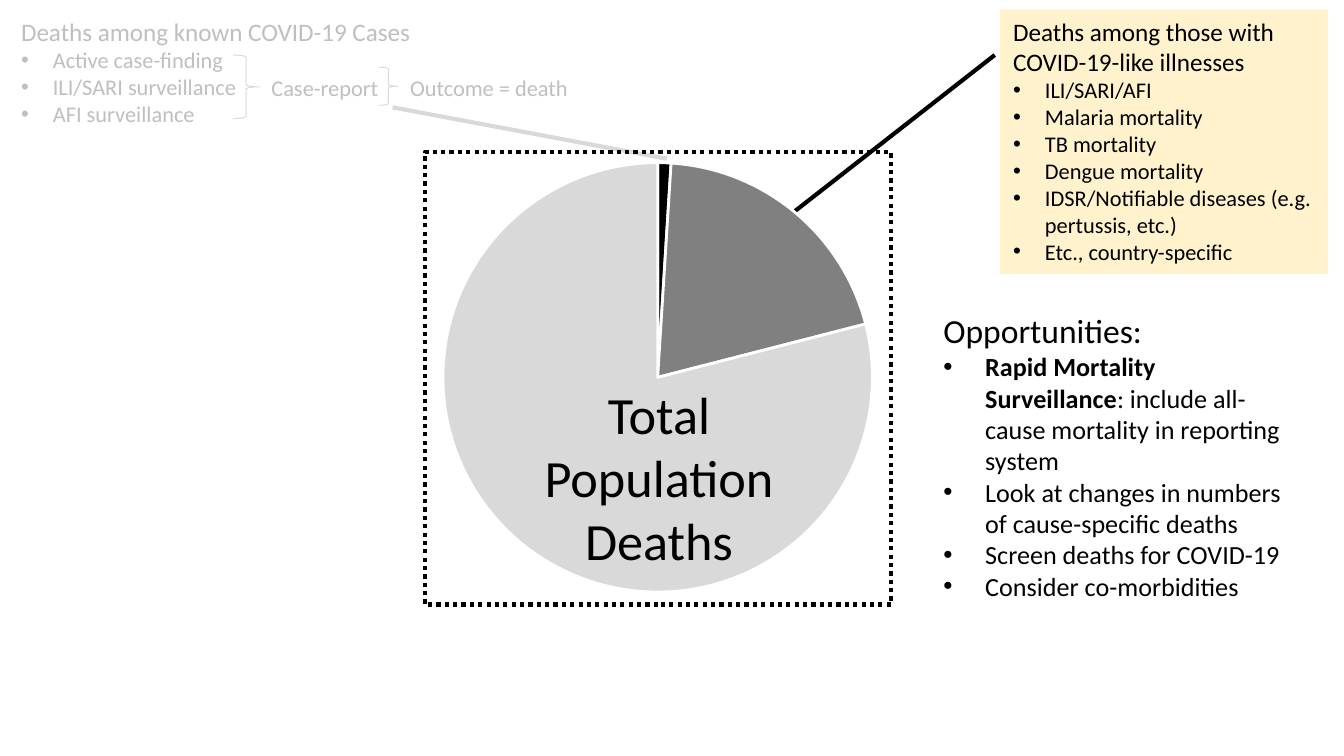
from pptx import Presentation
from pptx.chart.data import CategoryChartData
from pptx.dml.color import RGBColor
from pptx.enum.chart import XL_CHART_TYPE
from pptx.enum.dml import MSO_LINE
from pptx.enum.shapes import MSO_CONNECTOR, MSO_SHAPE
from pptx.enum.text import MSO_ANCHOR, PP_ALIGN
from pptx.oxml import parse_xml
from pptx.oxml.ns import nsdecls
from pptx.oxml.xmlchemy import OxmlElement
from pptx.util import Cm, Pt

PIE = XL_CHART_TYPE.PIE
DOTTED = MSO_LINE.ROUND_DOT
STRAIGHT = MSO_CONNECTOR.STRAIGHT
RECTANGLE, BRACE = MSO_SHAPE.RECTANGLE, MSO_SHAPE.LEFT_BRACE
TOP = MSO_ANCHOR.TOP
LEFT, CENTER = PP_ALIGN.LEFT, PP_ALIGN.CENTER

FONT = "Calibri"
BLACK = RGBColor(0x00, 0x00, 0x00)
WHITE = RGBColor(0xFF, 0xFF, 0xFF)
DARK_GREY = RGBColor(0x80, 0x80, 0x80)
FADED_TEXT = RGBColor(0xBF, 0xBF, 0xBF)
LIGHT_GREY = RGBColor(0xD9, 0xD9, 0xD9)
CREAM = RGBColor(0xFF, 0xF2, 0xCC)

KNOWN_CASES = ["Active case-finding", "ILI/SARI surveillance", "AFI surveillance"]
LIKE_ILLNESSES = [
    "ILI/SARI/AFI",
    "Malaria mortality",
    "TB mortality",
    "Dengue mortality",
    "IDSR/Notifiable diseases (e.g. pertussis, etc.)",
    "Etc., country-specific",
]
OPPORTUNITIES = [
    ("Rapid Mortality Surveillance", ": include all-cause mortality in reporting system"),
    "Look at changes in numbers of cause-specific deaths",
    "Screen deaths for COVID-19",
    "Consider co-morbidities",
]


def box(left, top, width, height):
    return Cm(left), Cm(top), Cm(width), Cm(height)


def style_runs(p, size, color):
    for r in p.runs:
        r.font.name = FONT
        r.font.size = Pt(size)
        r.font.color.rgb = color


def add_bullet(p, indent):
    pPr = p._p.get_or_add_pPr()
    pPr.set("marL", str(Cm(indent)))
    pPr.set("indent", str(-Cm(indent)))
    bullet_font = OxmlElement("a:buFont")
    bullet_font.set("typeface", "Arial")
    bullet = OxmlElement("a:buChar")
    bullet.set("char", "•")
    pPr.extend([bullet_font, bullet])


def fill_list(tf, heading, items, heading_size, item_size, indent, color=BLACK):
    tf.word_wrap = True
    tf.text = heading
    tf.paragraphs[0].alignment = LEFT
    style_runs(tf.paragraphs[0], heading_size, color)
    for item in items:
        p = tf.add_paragraph()
        p.alignment = LEFT
        if isinstance(item, tuple):
            for part in item:
                p.add_run().text = part
            p.runs[0].font.bold = True
        else:
            p.text = item
        add_bullet(p, indent)
        style_runs(p, item_size, color)


def add_label(s, position, text, size, color, align=LEFT, wrap=False):
    tf = s.shapes.add_textbox(*position).text_frame
    tf.word_wrap = wrap
    tf.text = text
    tf.paragraphs[0].alignment = align
    style_runs(tf.paragraphs[0], size, color)


def add_shape(s, kind, position, fill=None, line=None, width=0.5):
    sp = s.shapes.add_shape(kind, *position)
    sp.shadow.inherit = False
    if fill is None:
        sp.fill.background()
    else:
        sp.fill.solid()
        sp.fill.fore_color.rgb = fill
    if line is None:
        sp.line.fill.background()
    else:
        sp.line.color.rgb = line
        sp.line.width = Pt(width)
    return sp


def add_brace(s, position):
    add_shape(s, BRACE, position, line=LIGHT_GREY).rotation = 180


def add_line(s, x1, y1, x2, y2, color):
    line = s.shapes.add_connector(STRAIGHT, Cm(x1), Cm(y1), Cm(x2), Cm(y2))
    line.line.color.rgb = color
    line.line.width = Pt(2.25)
    line._element.spPr.append(OxmlElement("a:effectLst"))


def add_pie(s, position):
    data = CategoryChartData()
    data.categories = ["1", "2", "3", ""]
    data.add_series("Series 1", [1, 20, None, 79])
    chart = s.shapes.add_chart(PIE, *position, data).chart
    chart.has_legend = False
    chart.has_title = False
    chart.font.name = FONT
    chart.font.size = Pt(10)
    chart.font.color.rgb = BLACK
    plot = chart.plots[0]
    plot.vary_by_categories = True
    for i, color in enumerate([BLACK, DARK_GREY, FADED_TEXT, LIGHT_GREY]):
        point = plot.series[0].points[i].format
        point.fill.solid()
        point.fill.fore_color.rgb = color
        point.line.color.rgb = WHITE
        point.line.width = Pt(1.5)
    plot_area = chart._chartSpace.chart.plotArea
    for layout in plot_area.findall("{*}layout"):
        plot_area.remove(layout)
    plot_area.insert(0, parse_xml(
        f'<c:layout {nsdecls("c")}><c:manualLayout><c:layoutTarget val="inner"/>'
        '<c:xMode val="edge"/><c:yMode val="edge"/><c:x val="0.05"/><c:y val="0.04"/>'
        '<c:w val="0.9"/><c:h val="0.92"/></c:manualLayout></c:layout>'))


def main():
    prs = Presentation()
    prs.slide_width, prs.slide_height = Cm(25.4), Cm(14.29)
    s = prs.slides.add_slide(prs.slide_layouts[6])

    known = s.shapes.add_textbox(*box(0.15, 0.18, 10.72, 2.36))
    fill_list(known.text_frame, "Deaths among known COVID-19 Cases", KNOWN_CASES,
              13.5, 12, 0.6, FADED_TEXT)
    add_brace(s, box(4.4, 1.04, 0.5, 1.2))
    add_label(s, box(4.88, 1.27, 2.54, 0.76), "Case-report", 12, FADED_TEXT)
    add_brace(s, box(7.16, 1.27, 0.36, 0.72))
    add_label(s, box(7.5, 1.27, 3.53, 0.76), "Outcome = death", 12, FADED_TEXT)

    panel = add_shape(s, RECTANGLE, box(18.9, 0.18, 6.2, 5), fill=CREAM)
    panel.text_frame.vertical_anchor = TOP
    fill_list(panel.text_frame, "Deaths among those with COVID-19-like illnesses",
              LIKE_ILLNESSES, 13.5, 12, 0.6)

    add_line(s, 14.96, 4.04, 18.8, 1.04, BLACK)
    add_line(s, 7.42, 2.03, 12.6, 3, LIGHT_GREY)
    add_pie(s, box(7.92, 2.69, 9.02, 8.89))
    frame = add_shape(s, RECTANGLE, box(8.03, 2.87, 8.81, 8.56), line=BLACK, width=2.25)
    frame.line.dash_style = DOTTED
    add_label(s, box(9.7, 7.11, 5.51, 3.84), "Total Population Deaths", 28, BLACK,
              CENTER, True)

    chances = s.shapes.add_textbox(*box(17.58, 5.74, 7.06, 5.82))
    fill_list(chances.text_frame, "Opportunities:", OPPORTUNITIES, 18, 14, 0.79)
    prs.save("out.pptx")


if __name__ == "__main__":
    main()
